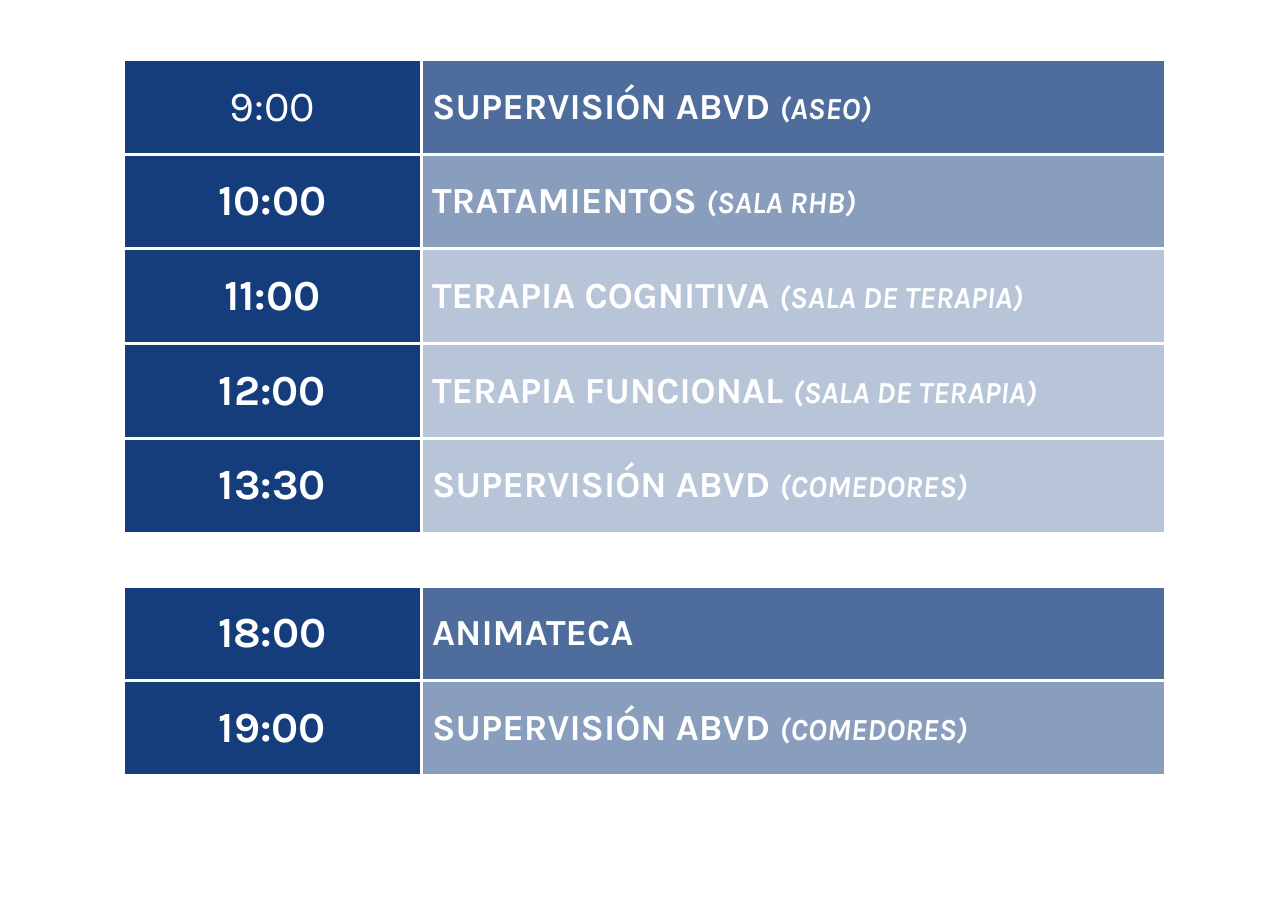
from typing import NamedTuple

from lxml.etree import SubElement
from pptx import Presentation
from pptx.dml.color import RGBColor
from pptx.enum.text import MSO_ANCHOR, PP_ALIGN
from pptx.oxml.ns import qn
from pptx.table import Table, _Cell
from pptx.util import Inches, Pt

NAVY = RGBColor(0x15, 0x3D, 0x7C)
WHITE = RGBColor(0xFF, 0xFF, 0xFF)
FONT = "Karla"

# Grid: the times take two columns, the activities five
COLUMN = Inches(9.46) / 7
ROW = Inches(0.86)
TIME_COLUMNS, ACTIVITY_COLUMNS = 2, 5
BREAK_ROWS = 0.56
LEFT, TOP = Inches(1.12), Inches(0.54)


class Session(NamedTuple):
    time: str
    activity: str
    place: str
    opacity: int
    bold_time: bool = True


# None is the midday break
SCHEDULE: list[Session | None] = [
    Session("9:00", "SUPERVISIÓN ABVD", "(ASEO)", 75, bold_time=False),
    Session("10:00", "TRATAMIENTOS", "(SALA RHB)", 50),
    Session("11:00", "TERAPIA COGNITIVA", "(SALA DE TERAPIA)", 30),
    Session("12:00", "TERAPIA FUNCIONAL", "(SALA DE TERAPIA)", 30),
    Session("13:30", "SUPERVISIÓN ABVD", "(COMEDORES)", 30),
    None,
    Session("18:00", "ANIMATECA", "", 75),
    Session("19:00", "SUPERVISIÓN ABVD", "(COMEDORES)", 50),
]


def paint_cell(cell: _Cell, color: RGBColor, opacity: int = 100) -> None:
    """Draw white borders, then a fill of the given opacity in percent."""
    properties = cell._tc.get_or_add_tcPr()
    for side in ("lnL", "lnR", "lnT", "lnB"):
        border = SubElement(properties, qn(f"a:{side}"), w=str(Pt(2.25)))
        border_fill = SubElement(border, qn("a:solidFill"))
        SubElement(border_fill, qn("a:srgbClr"), val=str(WHITE))
    cell.fill.solid()
    cell.fill.fore_color.rgb = color
    if opacity < 100:
        fill_color = properties.find(qn("a:solidFill")).find(qn("a:srgbClr"))
        SubElement(fill_color, qn("a:alpha"), val=str(opacity * 1000))
    cell.vertical_anchor = MSO_ANCHOR.MIDDLE


def write_time(cell: _Cell, session: Session) -> None:
    paragraph = cell.text_frame.paragraphs[0]
    paragraph.alignment = PP_ALIGN.CENTER
    paragraph.add_run().text = session.time
    font = paragraph.font
    font.name, font.size, font.bold = FONT, Pt(28), session.bold_time
    font.color.rgb = WHITE


def write_activity(cell: _Cell, session: Session) -> None:
    paragraph = cell.text_frame.paragraphs[0]
    activity = paragraph.add_run()
    activity.text = session.activity
    activity.font.size = Pt(24)
    if session.place:
        activity.text += " "
        place = paragraph.add_run()
        place.text = session.place
        place.font.size, place.font.italic = Pt(20), True
    font = paragraph.font
    font.name, font.bold = FONT, True
    font.color.rgb = WHITE


def fill_schedule(timetable: Table) -> None:
    for row, session in zip(timetable.rows, SCHEDULE):
        time_cell, activity_cell = row.cells
        if session is None:
            row.height = round(BREAK_ROWS * ROW)
            paint_cell(time_cell, WHITE)
            paint_cell(activity_cell, WHITE)
        else:
            row.height = ROW
            paint_cell(time_cell, NAVY)
            paint_cell(activity_cell, NAVY, session.opacity)
            write_time(time_cell, session)
            write_activity(activity_cell, session)


def main() -> None:
    presentation = Presentation()
    presentation.slide_width = Inches(11.69)
    presentation.slide_height = Inches(8.27)
    slide = presentation.slides.add_slide(presentation.slide_layouts[6])

    # Daily timetable
    width = round((TIME_COLUMNS + ACTIVITY_COLUMNS) * COLUMN)
    height = round((len(SCHEDULE) - 1 + BREAK_ROWS) * ROW)
    timetable = slide.shapes.add_table(
        len(SCHEDULE), 2, LEFT, TOP, width, height
    ).table
    timetable.first_row = timetable.horz_banding = False
    for column, span in zip(timetable.columns, (TIME_COLUMNS, ACTIVITY_COLUMNS)):
        column.width = round(span * COLUMN)
    fill_schedule(timetable)

    presentation.save("out.pptx")


if __name__ == "__main__":
    main()
